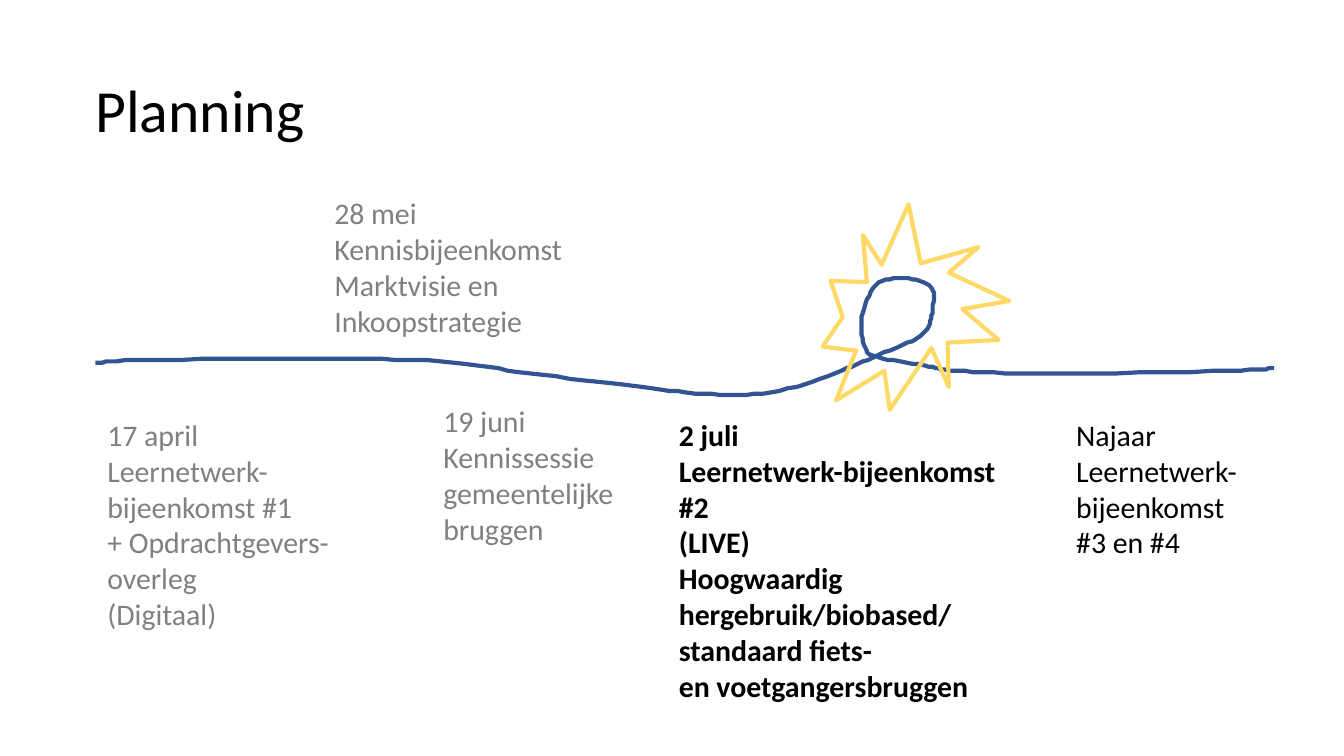
import dataclasses
import itertools

import pptx
import pptx.dml.color
import pptx.enum.text
import pptx.util

Cm = pptx.util.Cm
Pt = pptx.util.Pt

GREY = "808080"
BLACK = "000000"
BLUE = "325491"
YELLOW = "FFD966"

# Drawing points are in hundredths of an inch
DRAWING_UNIT = Cm(2.54) / 100

# The timeline is one smooth curve through these knots
WAVE = [(71, 270), (109, 268), (232, 267), (328, 269), (395, 278),
        (470, 287), (523, 293), (574, 292), (621, 278), (654, 264)]
LOOP = [(685, 250), (693, 235), (693, 214), (673, 207), (652, 212),
        (641, 236), (644, 259), (654, 266)]
TAIL = [(688, 272), (712, 276), (780, 278), (914, 276), (948, 274)]

# The sun goes from each ray tip to the notch that follows it, clockwise
RAY_TIPS = [(612, 258), (618, 209), (642, 175), (676, 152), (728, 184),
            (751, 224), (743, 253), (706, 288), (662, 305), (622, 298)]
RAY_NOTCHES = [(627, 236), (645, 210), (656, 197), (685, 196), (706, 203),
               (716, 230), (705, 255), (693, 259), (658, 276), (637, 261)]

BELOW_LINE = 7.75
NO_BREAK_SPACE = chr(160)


@dataclasses.dataclass
class Event:
    """A dated text block; lengths in cm, past events in grey."""
    lines: list
    left: float
    width: float
    height: float
    top: float = BELOW_LINE
    colour: str = GREY
    bold: bool = False


EVENTS = [
    Event(["17 april", "Leernetwerk-bijeenkomst #1",
           "+ Opdrachtgevers-overleg", "(Digitaal)"],
          left=1.78, width=5.31, height=4.37),
    Event(["28 mei", "Kennisbijeenkomst Marktvisie en Inkoopstrategie"],
          left=6.07, width=5.05, height=3.43, top=3.56),
    Event(["19 juni", "Kennissessie gemeentelijke bruggen"],
          left=8.13, width=4.37, height=3.51, top=7.49),
    Event(["2 juli", "Leernetwerk-bijeenkomst #2", "(LIVE)",
           "Hoogwaardig hergebruik/biobased/\v"
           f"standaard fiets- en{NO_BREAK_SPACE}voetgangersbruggen"],
          left=12.58, width=6.5, height=6.15, colour=BLACK, bold=True),
    Event(["Najaar", "Leernetwerk-bijeenkomst #3 en #4"],
          left=20.09, width=3.94, height=3, colour=BLACK),
]


def rgb(value):
    return pptx.dml.color.RGBColor.from_string(value)


def smooth_curve(knots, steps=8):
    """Return points of a Catmull-Rom curve that passes through all knots."""
    padded = [knots[0], *knots, knots[-1]]
    points = [knots[0]]
    for before, start, end, after in zip(padded, padded[1:], padded[2:], padded[3:]):
        for step in range(1, steps + 1):
            t = step / steps
            points.append(tuple(
                b + (c - a) * t / 2
                + (2 * a - 5 * b + 4 * c - d) * t ** 2 / 2
                + (3 * b - a - 3 * c + d) * t ** 3 / 2
                for a, b, c, d in zip(before, start, end, after)))
    return points


def write_text(frame, lines, size=16, colour=BLACK, bold=False, spacing=1.0,
               font="Calibri"):
    frame.word_wrap = True
    frame.auto_size = pptx.enum.text.MSO_AUTO_SIZE.NONE
    for index, line in enumerate(lines):
        paragraph = frame.add_paragraph() if index else frame.paragraphs[0]
        paragraph.text = line
        paragraph.alignment = pptx.enum.text.PP_ALIGN.LEFT
        paragraph.line_spacing = spacing
        for run in paragraph.runs:
            run.font.name = font
            run.font.size = Pt(size)
            run.font.bold = bold
            run.font.color.rgb = rgb(colour)


class PlanningSlide:
    def __init__(self, presentation, line_width=2.25):
        self.line_width = line_width
        title_only = presentation.slide_layouts[5]
        self.slide = presentation.slides.add_slide(title_only)

    def title(self, text, left, top, width, height):
        shape = self.slide.shapes.title
        shape.left, shape.top = Cm(left), Cm(top)
        shape.width, shape.height = Cm(width), Cm(height)
        shape.text_frame.vertical_anchor = pptx.enum.text.MSO_ANCHOR.MIDDLE
        write_text(shape.text_frame, [text], size=32, spacing=0.9)

    def event(self, event):
        box = self.slide.shapes.add_textbox(
            Cm(event.left), Cm(event.top), Cm(event.width), Cm(event.height))
        write_text(box.text_frame, event.lines, colour=event.colour, bold=event.bold)

    def outline(self, points, colour, close=False):
        builder = self.slide.shapes.build_freeform(*points[0], scale=DRAWING_UNIT)
        builder.add_line_segments(points[1:], close=close)
        shape = builder.convert_to_shape()
        shape.shadow.inherit = False
        shape.fill.background()
        shape.line.color.rgb = rgb(colour)
        shape.line.width = Pt(self.line_width)

    def timeline(self):
        self.outline(smooth_curve(WAVE + LOOP + TAIL), BLUE)

    def sun(self):
        rays = list(itertools.chain.from_iterable(zip(RAY_TIPS, RAY_NOTCHES)))
        self.outline(rays, YELLOW, close=True)


def main():
    presentation = pptx.Presentation()
    presentation.slide_width = Cm(25.4)
    presentation.slide_height = Cm(14.29)
    planning = PlanningSlide(presentation)
    planning.title("Planning", left=1.55, top=0.76, width=21.89, height=2.77)
    planning.timeline()
    planning.sun()
    for event in EVENTS:
        planning.event(event)
    presentation.save("out.pptx")


if __name__ == "__main__":
    main()
